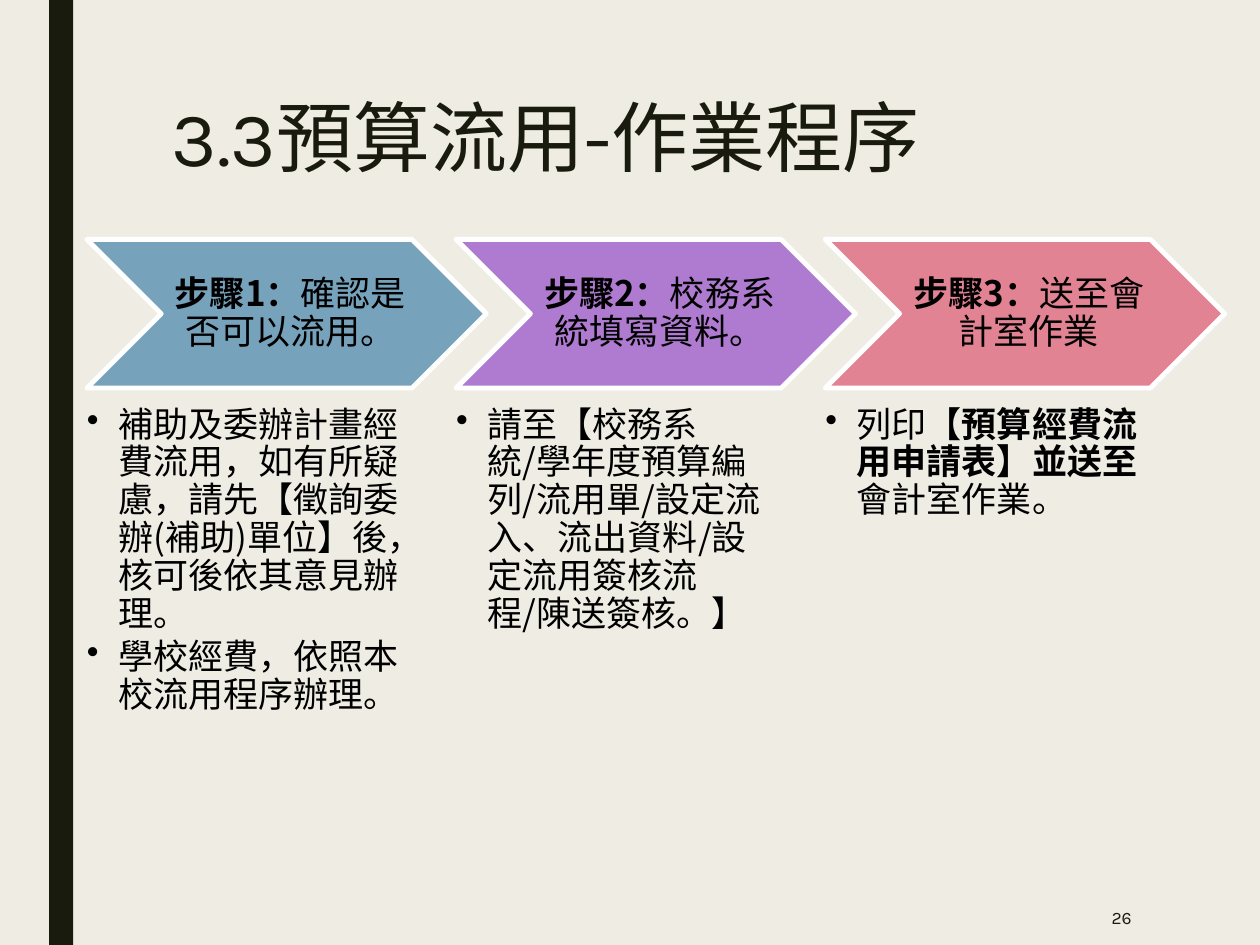
from lxml.etree import SubElement
from pptx import Presentation
from pptx.dml.color import RGBColor
from pptx.enum.shapes import MSO_SHAPE as Shape
from pptx.enum.text import MSO_ANCHOR as Anchor, PP_ALIGN as Align
from pptx.oxml.ns import qn
from pptx.util import Inches, Pt

COLORS = {
    "background": "EFEDE3",
    "ink": "191B0E",
    "text": "000000",
    "outline": "FFFFFF",
    "check": "77A2BB",
    "fill_in": "AE7BD0",
    "deliver": "E28394",
}
LATIN, CJK = "Karla", "Noto Sans CJK SC"
FIRST_LEFT, STEP_PITCH = 0.69, 2.93

STEPS = [
    ("check", "步驟1：", "確認是否可以流用。", [
        [("補助及委辦計畫經費流用，如有所疑慮，請先【徵詢委辦(補助)單位】後，核可後依其意見辦理。", False)],
        [("學校經費，依照本校流用程序辦理。", False)],
    ]),
    ("fill_in", "步驟2：", "校務系統填寫資料。", [
        [("請至【校務系統/學年度預算編列/流用單/設定流入、流出資料/設定流用簽核流程/陳送簽核。】", False)],
    ]),
    ("deliver", "步驟3：", "送至會計室作業", [
        [("列印", False), ("【預算經費流用申請表】並送至", True), ("會計室作業。", False)],
    ]),
]


def color(name):
    """Return the named colour."""
    return RGBColor.from_string(COLORS[name])


def add_block(slide, kind, box, fill):
    """Add a filled preset shape without line or shadow."""
    block = slide.shapes.add_shape(kind, *map(Inches, box))
    block.shadow.inherit = False
    block.fill.solid()
    block.fill.fore_color.rgb = color(fill)
    block.line.fill.background()
    return block


def add_frame(slide, box, margins=(0.1, 0.05, 0.1, 0.05), anchor=Anchor.TOP):
    """Add a wrapping text box and return its text frame."""
    frame = slide.shapes.add_textbox(*map(Inches, box)).text_frame
    frame.word_wrap = True
    frame.vertical_anchor = anchor
    (frame.margin_left, frame.margin_top,
     frame.margin_right, frame.margin_bottom) = map(Inches, margins)
    return frame


def write(paragraph, runs, size, face, ink, align=Align.LEFT, spacing=0.9):
    """Fill a paragraph with (text, bold) runs in one font."""
    paragraph.alignment = align
    paragraph.line_spacing = spacing
    font = paragraph.font
    font.size = Pt(size)
    font.name = face
    font.color.rgb = color(ink)
    east_asian = SubElement(paragraph._p.pPr.find(qn("a:defRPr")), qn("a:ea"))
    east_asian.set("typeface", CJK)
    for text, bold in runs:
        run = paragraph.add_run()
        run.text = text
        run.font.bold = bold


def add_bullet(paragraph):
    """Give a paragraph a hanging round bullet."""
    properties = paragraph._p.get_or_add_pPr()
    properties.set("marL", str(Inches(0.25)))
    properties.set("indent", str(-Inches(0.25)))
    SubElement(properties, qn("a:buChar")).set("char", "•")


def add_step(slide, left, fill, label, action, details):
    """Add a chevron with its heading and the bulleted details below."""
    chevron = add_block(slide, Shape.CHEVRON, (left, 1.9, 3.17, 1.18), fill)
    chevron.line.color.rgb = color("outline")
    chevron.line.width = Pt(2.75)
    heading = add_frame(slide, (left + 0.59, 1.9, 1.99, 1.18),
                        (0.09, 0.03, 0.03, 0.03), Anchor.MIDDLE)
    write(heading.paragraphs[0], [(label, True), (action, False)],
          20, CJK, "text", Align.CENTER)
    body = add_frame(slide, (left, 3.23, 2.53, 3.54), (0, 0, 0, 0))
    for index, runs in enumerate(details):
        item = body.add_paragraph() if index else body.paragraphs[0]
        item.space_after = Pt(3)
        add_bullet(item)
        write(item, runs, 20, CJK, "text")


def main():
    """Build the budget transfer procedure slide."""
    deck = Presentation()
    deck.slide_width, deck.slide_height = Inches(10), Inches(7.5)
    slide = deck.slides.add_slide(deck.slide_layouts[6])
    slide.background.fill.solid()
    slide.background.fill.fore_color.rgb = color("background")

    add_block(slide, Shape.RECTANGLE, (0.39, 0, 0.19, 7.5), "ink")
    title = add_frame(slide, (1.12, 0.75, 7.88, 1.62))
    write(title.paragraphs[0], [(" 3.3預算流用-作業程序", False)],
          44, LATIN, "ink", spacing=0.89)
    page_number = add_frame(slide, (7.77, 7.06, 1.31, 0.44), anchor=Anchor.MIDDLE)
    write(page_number.paragraphs[0], [("26", False)],
          10, LATIN, "ink", Align.RIGHT, 1.0)
    for index, step in enumerate(STEPS):
        add_step(slide, FIRST_LEFT + index * STEP_PITCH, *step)

    deck.save("out.pptx")


if __name__ == "__main__":
    main()
